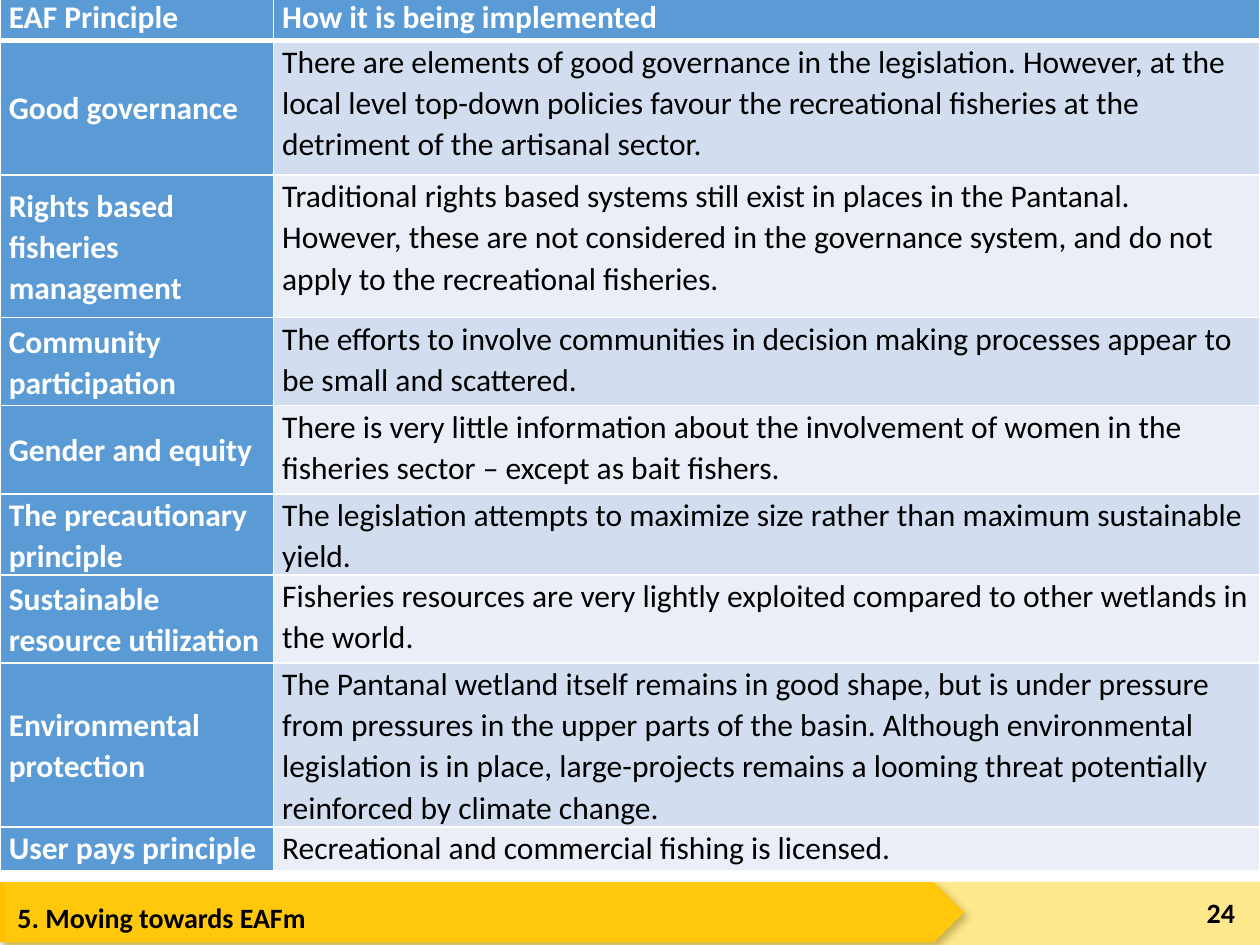
"""Builds a slide with a table of EAF principles above a footer band."""
from typing import NamedTuple

from lxml import etree
from pptx import Presentation
from pptx.dml.color import RGBColor
from pptx.enum.shapes import MSO_SHAPE
from pptx.enum.text import MSO_ANCHOR, PP_ALIGN
from pptx.oxml.ns import qn
from pptx.util import Inches, Pt

PLATE, RECT = MSO_SHAPE.PENTAGON, MSO_SHAPE.RECTANGLE
TOP, MIDDLE = MSO_ANCHOR.TOP, MSO_ANCHOR.MIDDLE
LEFT, RIGHT = PP_ALIGN.LEFT, PP_ALIGN.RIGHT

WHITE = RGBColor(0xFF, 0xFF, 0xFF)
BLACK = RGBColor(0x00, 0x00, 0x00)
BLUE = RGBColor(0x5B, 0x9B, 0xD5)
BANDS = (RGBColor(0xD2, 0xDE, 0xEF), RGBColor(0xEA, 0xEF, 0xF7))
AMBER = RGBColor(0xFF, 0xC0, 0x00)
GOLD = RGBColor(0xFF, 0xD0, 0x1B)
FONT = "Calibri"
COLS = (2.17, 7.83)


class Row(NamedTuple):
    height: float
    name: str
    text: str
    anchor: MSO_ANCHOR = MIDDLE


class Box(NamedTuple):
    left: float
    top: float
    width: float
    height: float


class Note(NamedTuple):
    box: Box
    text: str
    align: PP_ALIGN
    anchor: MSO_ANCHOR


ROWS = (
    Row(0.35, "EAF Principle", "How it is being implemented", TOP),
    Row(1.07, "Good governance",
        "There are elements of good governance in the legislation. However, at the local level "
        "top-down policies favour the recreational fisheries at the detriment of the artisanal "
        "sector."),
    Row(1.13, "Rights based fisheries management",
        "Traditional rights based systems still exist in places in the Pantanal. However, these "
        "are not considered in the governance system, and do not apply to the recreational "
        "fisheries."),
    Row(0.7, "Community participation",
        "The efforts to involve communities in decision making processes appear to be small and "
        "scattered."),
    Row(0.7, "Gender and equity",
        "There is very little information about the involvement of women in the fisheries "
        "sector – except as bait fishers."),
    Row(0.64, "The precautionary principle",
        "The legislation attempts to maximize size rather than maximum sustainable yield."),
    Row(0.7, "Sustainable resource utilization",
        "Fisheries resources are very lightly exploited compared to other wetlands in the "
        "world."),
    Row(1.3, "Environmental protection",
        "The Pantanal wetland itself remains in good shape, but is under pressure from pressures "
        "in the upper parts of the basin. Although environmental legislation is in place, "
        "large-projects remains a looming threat potentially reinforced by climate change."),
    Row(0.35, "User pays principle", "Recreational and commercial fishing is licensed.", TOP),
)
NOTES = (
    Note(Box(0.04, 7.1, 7.35, 0.41), "5. Moving towards EAFm", LEFT, TOP),
    Note(Box(9.17, 7.04, 0.73, 0.4), "24", RIGHT, MIDDLE),
)


def place(box: Box) -> tuple:
    return tuple(Inches(side) for side in box)


def add_run(para, text: str, size: int, color: RGBColor, bold: bool) -> None:
    run = para.add_run()
    run.text = text
    font = run.font
    font.name, font.size, font.bold = FONT, Pt(size), bold
    font.color.rgb = color


def add_line(cell, side: str, width: int) -> None:
    line = etree.SubElement(cell._tc.get_or_add_tcPr(), qn(f"a:ln{side}"), w=str(Pt(width)))
    fill = etree.SubElement(line, qn("a:solidFill"))
    etree.SubElement(fill, qn("a:srgbClr"), val=str(WHITE))


def fill_cell(cell, text: str, fill: RGBColor, anchor: MSO_ANCHOR, head: bool) -> None:
    for side in "LRTB":
        add_line(cell, side, 3 if head and side == "B" else 1)
    cell.fill.solid()
    cell.fill.fore_color.rgb = fill
    cell.margin_left = cell.margin_right = Inches(0.07)
    cell.margin_top = cell.margin_bottom = 0
    cell.vertical_anchor = anchor
    para = cell.text_frame.paragraphs[0]
    para.line_spacing = 1.07
    label = fill == BLUE
    add_run(para, text, 18, WHITE if label else BLACK, label)


def add_grid(slide) -> None:
    total = sum(row.height for row in ROWS)
    box = Box(0, -0.03, sum(COLS), total)
    table = slide.shapes.add_table(len(ROWS), len(COLS), *place(box)).table
    for col, width in zip(table.columns, COLS):
        col.width = Inches(width)
    for i, row in enumerate(ROWS):
        table.rows[i].height = Inches(row.height)
        head = i == 0
        fill = BLUE if head else BANDS[(i - 1) % 2]
        fill_cell(table.cell(i, 0), row.name, BLUE, row.anchor, head)
        fill_cell(table.cell(i, 1), row.text, fill, TOP, head)


def add_band(slide, kind: MSO_SHAPE, box: Box, fill: RGBColor):
    band = slide.shapes.add_shape(kind, *place(box))
    band.fill.solid()
    band.fill.fore_color.rgb = fill
    band.line.fill.background()
    band.shadow.inherit = False
    return band


def add_alpha(color, share: int) -> None:
    etree.SubElement(color, qn("a:alpha"), val=str(share * 1000))


def add_shade(band) -> None:
    effect = band._element.spPr.find(qn("a:effectLst"))
    shade = etree.SubElement(effect, qn("a:outerShdw"), blurRad=str(Pt(4)), dist=str(Pt(3)),
                             dir=str(45 * 60000), algn="tl", rotWithShape="0")
    add_alpha(etree.SubElement(shade, qn("a:srgbClr"), val=str(BLACK)), 40)


def add_note(slide, note: Note) -> None:
    frame = slide.shapes.add_textbox(*place(note.box)).text_frame
    frame.word_wrap = True
    frame.vertical_anchor = note.anchor
    para = frame.paragraphs[0]
    para.alignment = note.align
    add_run(para, note.text, 16, BLACK, True)


def main() -> None:
    deck = Presentation()
    deck.slide_width, deck.slide_height = Inches(10), Inches(7.5)
    slide = deck.slides.add_slide(deck.slide_layouts[6])
    add_shade(add_band(slide, PLATE, Box(0, 7, 7.65, 0.48), AMBER))
    veil = add_band(slide, RECT, Box(0.04, 7, 9.96, 0.53), GOLD)
    add_alpha(veil._element.spPr.find(qn("a:solidFill"))[0], 50)
    for note in NOTES:
        add_note(slide, note)
    add_grid(slide)
    deck.save("out.pptx")


if __name__ == "__main__":
    main()
